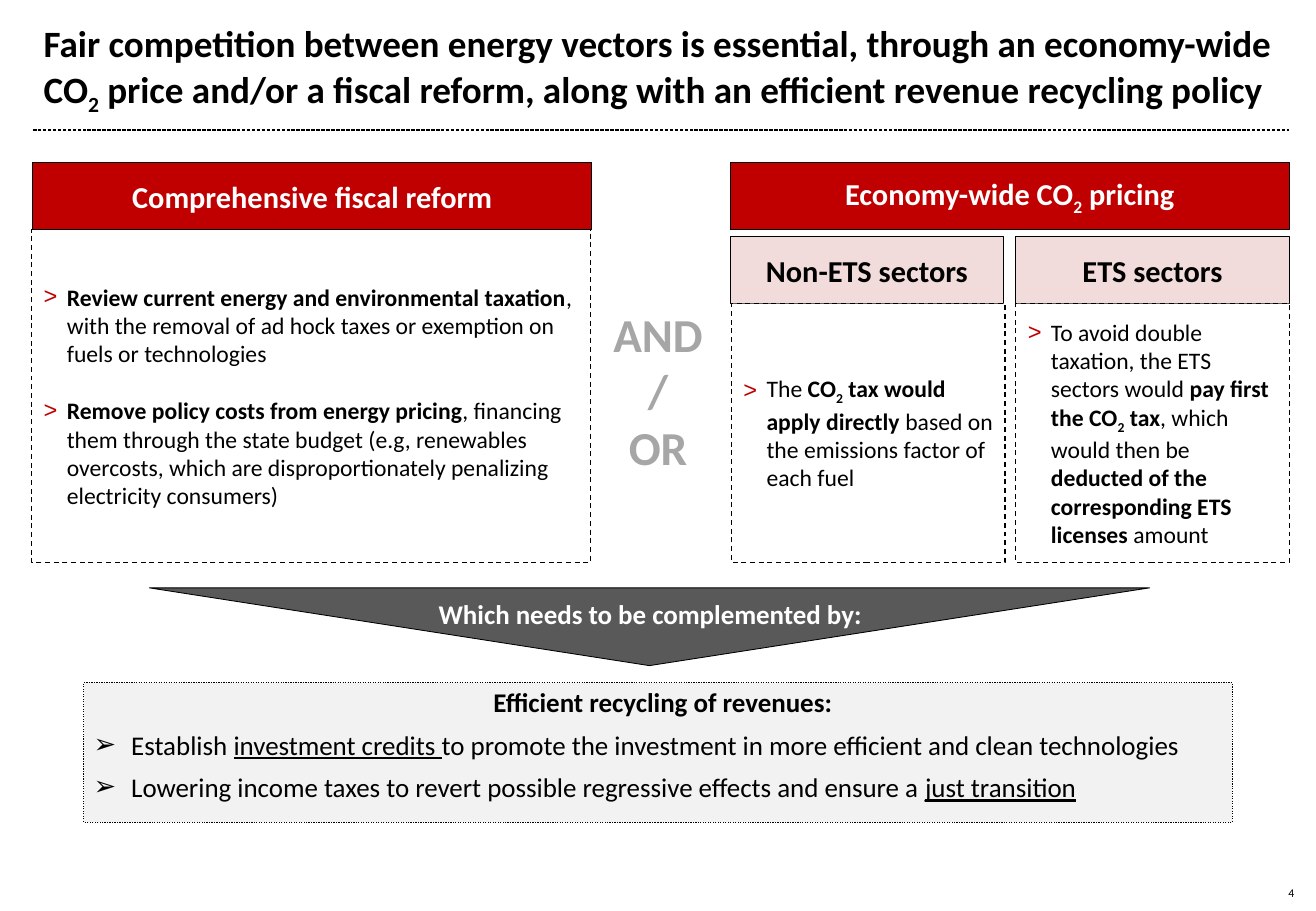
"""Build the slide on fair competition between energy vectors."""
from dataclasses import dataclass

from lxml.etree import SubElement
from pptx import Presentation
from pptx.dml.color import RGBColor
from pptx.enum.dml import MSO_LINE_DASH_STYLE as Dash
from pptx.enum.shapes import MSO_CONNECTOR, MSO_SHAPE as Shape
from pptx.enum.text import MSO_ANCHOR as Anchor, MSO_AUTO_SIZE as AutoSize, PP_ALIGN as Align
from pptx.oxml.ns import qn
from pptx.util import Inches, Pt


@dataclass(frozen=True)
class Theme:
    font: str = "Calibri"
    black: str = "000000"
    white: str = "FFFFFF"
    red: str = "C00000"
    pink: str = "F2DCDB"
    dark: str = "595959"
    middle: str = "A6A6A6"
    light: str = "F2F2F2"
    title: int = 22
    header: int = 18
    banner: int = 16
    body: int = 14
    choice: int = 28
    number: int = 7


THEME = Theme()


def outline(shape, place, fill, dash=Dash.SOLID, width=0.75):
    """Place a shape and set its fill and border."""
    shape.left, shape.top, shape.width, shape.height = map(Inches, place)
    shape.shadow.inherit = False
    shape.fill.solid()
    shape.fill.fore_color.rgb = RGBColor.from_string(fill)
    shape.line.color.rgb = RGBColor.from_string(THEME.black)
    shape.line.width = Pt(width)
    shape.line.dash_style = dash
    return shape


def write(shape, paragraphs, size, color=THEME.black, align=Align.LEFT, anchor=Anchor.TOP,
          marker=None, marker_color=THEME.black, indent=0.19, gap=0, spacing=1.0, plain=0):
    """Fill a shape with paragraphs of (text, style) runs: b bold, u underlined, s subscript."""
    frame = shape.text_frame
    frame.word_wrap = True
    frame.auto_size = AutoSize.NONE
    frame.vertical_anchor = anchor
    for index, runs in enumerate(paragraphs):
        paragraph = frame.add_paragraph() if index else frame.paragraphs[0]
        paragraph.alignment = align if index >= plain else Align.CENTER
        paragraph.line_spacing = spacing
        paragraph.space_before = Pt(gap if index else 0)
        properties = paragraph._p.get_or_add_pPr()
        bulleted = marker and index >= plain
        properties.set("marL", str(Inches(indent) if bulleted else 0))
        properties.set("indent", str(-Inches(indent) if bulleted else 0))
        if bulleted:
            SubElement(SubElement(properties, qn("a:buClr")), qn("a:srgbClr"), val=marker_color)
            SubElement(properties, qn("a:buFont"), typeface="Arial")
            SubElement(properties, qn("a:buChar"), char=marker)
        else:
            SubElement(properties, qn("a:buNone"))
        for text, style in runs:
            run = paragraph.add_run()
            run.text = text
            run.font.name = THEME.font
            run.font.size = Pt(size)
            run.font.color.rgb = RGBColor.from_string(color)
            run.font.bold = "b" in style
            run.font.underline = "u" in style
            if "s" in style:
                run.font._element.set("baseline", "-25000")


deck = Presentation()
deck.slide_width, deck.slide_height = Inches(10.83), Inches(7.5)
slide = deck.slides.add_slide(deck.slide_layouts[3])
shapes = slide.shapes
title, recycling, reform = slide.placeholders

title.left, title.top, title.width, title.height = map(Inches, (0.26, 0.14, 10.49, 0.79))
write(title, [[
    ("Fair competition between energy vectors is essential, through an economy-wide CO", "b"),
    ("2", "bs"),
    (" price and/or a fiscal reform, along with an efficient revenue recycling policy", "b"),
]], THEME.title, spacing=0.97)

rule = shapes.add_connector(MSO_CONNECTOR.STRAIGHT, Inches(0.27), Inches(1.07), Inches(10.61), Inches(1.07))
rule.line.color.rgb = RGBColor.from_string(THEME.black)
rule.line.width = Pt(0.75)
rule.line.dash_style = Dash.SQUARE_DOT
SubElement(rule._element.spPr, qn("a:effectLst"))

headers = [
    ((0.27, 1.34, 4.6, 0.55), THEME.red, THEME.white, [("Comprehensive fiscal reform", "b")]),
    ((6.01, 1.34, 4.6, 0.55), THEME.red, THEME.white,
     [("Economy-wide CO", "b"), ("2", "bs"), (" pricing", "b")]),
    ((6.01, 1.95, 2.25, 0.55), THEME.pink, THEME.black, [("Non-ETS sectors", "b")]),
    ((8.36, 1.95, 2.25, 0.55), THEME.pink, THEME.black, [("ETS sectors", "b")]),
]
for place, fill, color, runs in headers:
    header = outline(shapes.add_shape(Shape.RECTANGLE, 0, 0, 0, 0), place, fill)
    write(header, [runs], THEME.header, color, Align.CENTER, Anchor.MIDDLE)

non_ets, ets = (shapes.add_shape(Shape.RECTANGLE, 0, 0, 0, 0) for sector in range(2))
measures = [
    (reform, (0.26, 1.89, 4.6, 2.74), [
        [("Review current energy and environmental taxation", "b"),
         (", with the removal of ad hock taxes or exemption on fuels or technologies", "")],
        [("Remove policy costs from energy pricing", "b"),
         (", financing them through the state budget (e.g, renewables overcosts, "
          "which are disproportionately penalizing electricity consumers)", "")],
    ]),
    (non_ets, (6.02, 2.5, 2.25, 2.13), [
        [("The ", ""), ("CO", "b"), ("2", "bs"), (" tax would apply directly ", "b"),
         ("based on the emissions factor of each fuel", "")],
    ]),
    (ets, (8.36, 2.5, 2.25, 2.13), [
        [("To avoid double taxation, the ETS sectors would ", ""), ("pay first the CO", "b"),
         ("2", "bs"), (" tax", "b"), (", which would then be ", ""),
         ("deducted of the corresponding ETS licenses", "b"), (" amount", "")],
    ]),
]
for measure, place, paragraphs in measures:
    outline(measure, place, THEME.white, Dash.DASH)
    write(measure, paragraphs, THEME.body, anchor=Anchor.MIDDLE, marker=">",
          marker_color=THEME.red, gap=17)

outline(shapes.add_shape(Shape.DOWN_ARROW, 0, 0, 0, 0), (1.23, 4.84, 8.23, 0.64), THEME.dark, width=0.5)
arrow = shapes[-1]
arrow.adjustments[0], arrow.adjustments[1] = 0.5, 1

labels = [
    ((3.61, 4.87, 4.54, 0.37), 0, ["Which needs to be complemented by:"], "b",
     THEME.banner, THEME.white, Align.LEFT),
    ((5.04, 2.46, 0.75, 1.51), 0, ["AND", "/", "OR"], "b", THEME.choice, THEME.middle, Align.CENTER),
    ((10.14, 7.24, 0.61, 0.28), 0.1, ["4"], "", THEME.number, THEME.black, Align.RIGHT),
]
for place, inset, lines, style, size, color, align in labels:
    label = shapes.add_textbox(*map(Inches, place))
    label.text_frame.margin_left = label.text_frame.margin_right = Inches(inset)
    write(label, [[(line, style)] for line in lines], size, color, align)

outline(recycling, (0.69, 5.62, 9.45, 1.15), THEME.light, Dash.ROUND_DOT)
margins = recycling.text_frame
margins.margin_left = Inches(0.08)
margins.margin_top = margins.margin_right = margins.margin_bottom = 0
write(recycling, [
    [("Efficient recycling of revenues:", "b")],
    [("Establish ", ""), ("investment credits ", "u"),
     ("to promote the investment in more efficient and clean technologies", "")],
    [("Lowering income taxes to revert possible regressive effects and ensure a ", ""),
     ("just transition", "u")],
], THEME.banner, marker="➢", indent=0.31, gap=4, spacing=1.1, plain=1)

deck.save("out.pptx")
